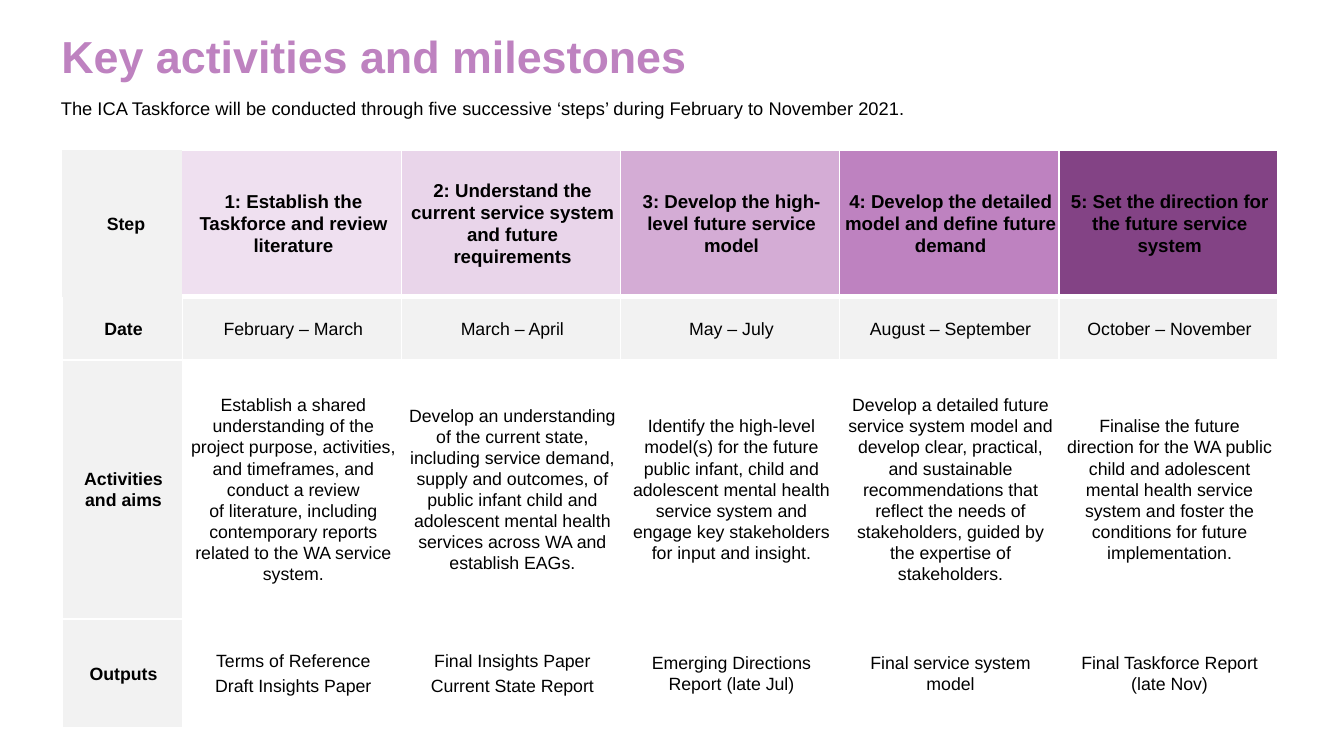
from lxml.etree import SubElement
from pptx import Presentation
from pptx.dml.color import RGBColor as Color
from pptx.enum.text import MSO_ANCHOR as Anchor, PP_ALIGN as Align
from pptx.oxml.ns import qn
from pptx.util import Cm, Pt

TITLE = "Key activities and milestones"
INTRO = ("The ICA Taskforce will be conducted through five successive ‘steps’ "
         "during February to November 2021.")
ROWS = [
    [" Step",
     "1: Establish the Taskforce and review literature",
     "2: Understand the current service system and future requirements",
     "3: Develop the high-level future service model",
     "4: Develop the detailed model and define future demand",
     "5: Set the direction for the future service system"],
    ["Date", "February – March", "March – April", "May – July",
     "August – September", "October – November"],
    ["Activities and aims",
     "Establish a shared understanding of the project purpose, activities, and "
     "timeframes, and conduct a review\nof literature, including contemporary "
     "reports related to the WA service system.",
     "Develop an understanding of the current state, including service demand, "
     "supply and outcomes, of public infant child and adolescent mental health "
     "services across WA and establish EAGs.",
     "Identify the high-level model(s) for the future public infant, child and "
     "adolescent mental health service system and engage key stakeholders for "
     "input and insight.",
     "Develop a detailed future service system model and develop clear, practical, "
     "and sustainable recommendations that reflect the needs of stakeholders, "
     "guided by the expertise of stakeholders.",
     "Finalise the future direction for the WA public child and adolescent mental "
     "health service system and foster the conditions for future implementation."],
    ["Outputs",
     ("Terms of Reference", "Draft Insights Paper"),
     ("Final Insights Paper", "Current State Report"),
     "Emerging Directions Report (late Jul)",
     "Final service system model",
     "Final Taskforce Report (late Nov)"],
]
COLORS = {"title": "BE82C0", "text": "000000", "label": "F2F2F2", "plain": "FFFFFF",
          "line": "FFFFFF", "step1": "EFE0F0", "step2": "E9D5EA", "step3": "D4ACD5",
          "step4": "BE82C0", "step5": "834385"}
ROW_HEIGHTS = [2.77, 1.19, 4.9, 2.06]
LABEL_WIDTH, STEP_WIDTH = 2.28, 4.14
TABLE_LEFT, TABLE_TOP = 1.17, 2.84
CELL_FORMAT = {"margin_left": Cm(0.1), "margin_right": Cm(0.05), "margin_top": Cm(0.1),
               "margin_bottom": Cm(0.1), "vertical_anchor": Anchor.MIDDLE}


def assign(target, values):
    for name, value in values.items():
        setattr(target, name, value)


def write(para, text, size, color="text", bold=False, **layout):
    assign(para, layout)
    for number, line in enumerate(text.split("\n")):
        if number:
            para.add_line_break()
        span = para.add_run()
        span.text = line
        assign(span.font, {"name": "Arial", "size": Pt(size), "bold": bold})
        span.font.color.rgb = Color.from_string(COLORS[color])
    for line_break in para._p.findall(qn("a:br")):
        SubElement(line_break, qn("a:rPr"), sz=str(int(size * 100)))


def add_text(page, place, margins, text, size, **style):
    box = page.shapes.add_textbox(*map(Cm, place))
    frame = box.text_frame
    frame.word_wrap = True
    side, edge = margins
    assign(frame, {"margin_left": Cm(side), "margin_right": Cm(side),
                   "margin_top": Cm(edge), "margin_bottom": Cm(edge)})
    write(frame.paragraphs[0], text, size, line_spacing=0.9, **style)


def border_widths(row, column):
    widths = dict.fromkeys("LRTB", 1)
    if column == 0 and row == 0:
        widths = dict.fromkeys("LRTB", 0)
    elif column == 0 and row == 1:
        widths["T"] = 0
    elif row == 0:
        widths["B"] = 3
        widths["L"] = 0 if column == 1 else 1
    elif row == 1:
        widths["T"] = 3
    return widths


def add_borders(cell, widths):
    properties = cell._tc.get_or_add_tcPr()
    for side, width in widths.items():
        line = SubElement(properties, qn(f"a:ln{side}"), w=str(Pt(width)))
        if width:
            fill = SubElement(line, qn("a:solidFill"))
            SubElement(fill, qn("a:srgbClr"), val=COLORS["line"])
        else:
            SubElement(line, qn("a:noFill"))


def cell_color(row, column):
    if column == 0 or row == 1:
        return "label"
    return f"step{column}" if row == 0 else "plain"


def fill_cell(cell, row, column, content):
    assign(cell, CELL_FORMAT)
    add_borders(cell, border_widths(row, column))
    cell.fill.solid()
    cell.fill.fore_color.rgb = Color.from_string(COLORS[cell_color(row, column)])
    size = 10 if row == 0 and column else 9.5
    frame = cell.text_frame
    lines = [content] if isinstance(content, str) else content
    for number, text in enumerate(lines):
        para = frame.add_paragraph() if number else frame.paragraphs[0]
        write(para, text, size, bold=row == 0 or column == 0, alignment=Align.CENTER,
              line_spacing=1.06, space_before=Pt(2 if number else 0))


def add_schedule(page):
    widths = [LABEL_WIDTH] + [STEP_WIDTH] * (len(ROWS[0]) - 1)
    place = TABLE_LEFT, TABLE_TOP, sum(widths), sum(ROW_HEIGHTS)
    table = page.shapes.add_table(len(ROWS), len(widths), *map(Cm, place)).table
    assign(table, {"first_row": False, "horz_banding": False})
    for column, width in zip(table.columns, widths):
        column.width = Cm(width)
    for row, height in zip(table.rows, ROW_HEIGHTS):
        row.height = Cm(height)
    for row, contents in enumerate(ROWS):
        for column, content in enumerate(contents):
            fill_cell(table.cell(row, column), row, column, content)


def main():
    deck = Presentation()
    assign(deck, {"slide_width": Cm(25.4), "slide_height": Cm(14.29)})
    page = deck.slides.add_slide(deck.slide_layouts[6])
    add_text(page, (0.91, 0.53, 17.8, 1.04), (0.25, 0.13), TITLE, 24,
             color="title", bold=True)
    add_text(page, (0.97, 1.78, 22.63, 1.57), (0.18, 0.1), INTRO, 9.8)
    add_schedule(page)
    deck.save("out.pptx")


if __name__ == "__main__":
    main()
